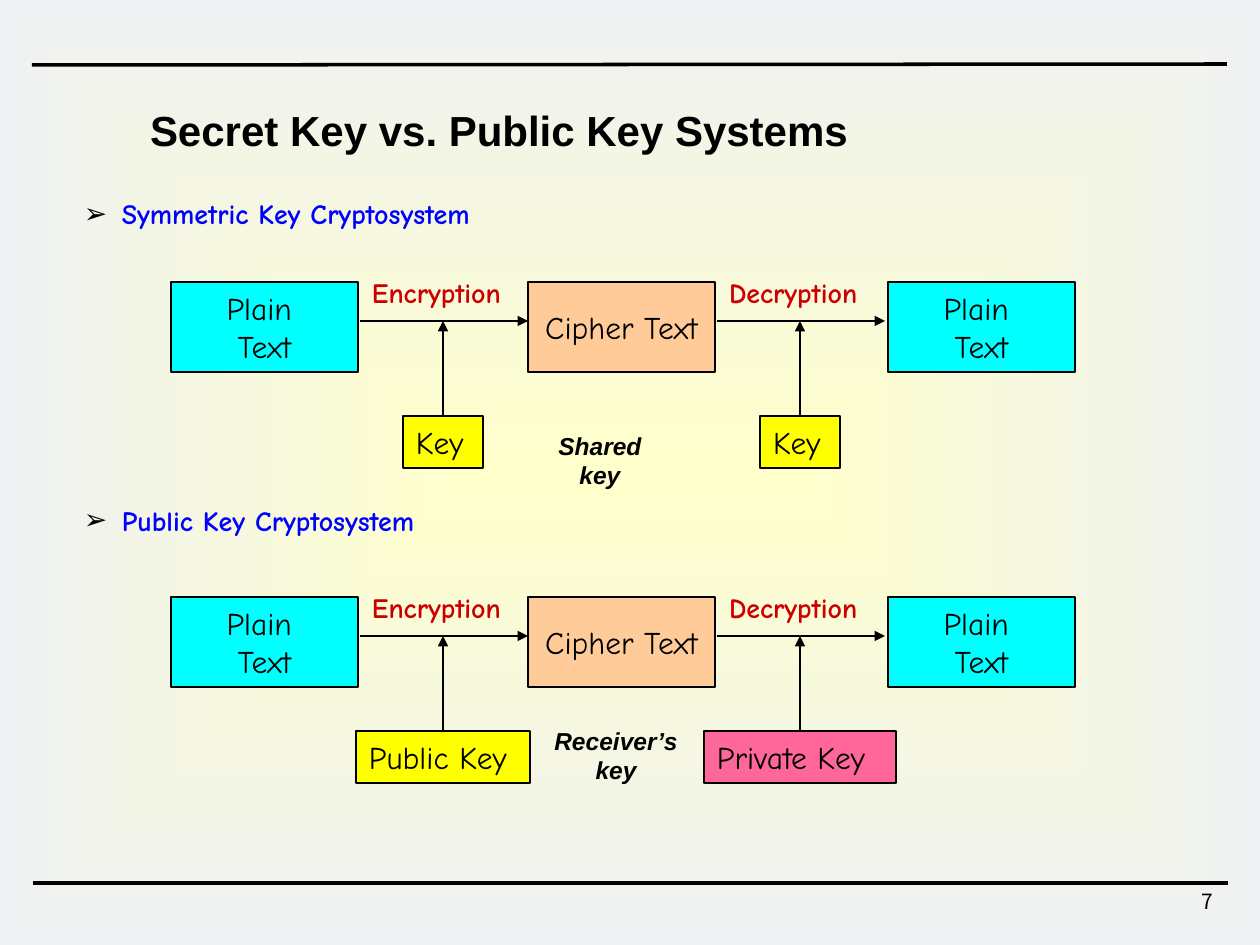
from dataclasses import dataclass

from lxml.etree import SubElement
from pptx import Presentation
from pptx.dml.color import RGBColor
from pptx.enum.shapes import MSO_CONNECTOR as Connector, MSO_SHAPE as Shape
from pptx.enum.text import MSO_ANCHOR as Anchor, MSO_AUTO_SIZE as AutoSize, PP_ALIGN as Align
from pptx.oxml.ns import qn
from pptx.slide import Slide
from pptx.util import Emu, Pt

BLACK = RGBColor(0x00, 0x00, 0x00)
BLUE = RGBColor(0x00, 0x00, 0xFF)
RED = RGBColor(0xCC, 0x00, 0x00)
CYAN = RGBColor(0x00, 0xFF, 0xFF)
PEACH = RGBColor(0xFF, 0xCC, 0x99)
YELLOW = RGBColor(0xFF, 0xFF, 0x00)
PINK = RGBColor(0xFF, 0x66, 0x99)
CREAM = RGBColor(0xFF, 0xFF, 0xCC)
MIST = RGBColor(0xEE, 0xF1, 0xF2)

HEADING = {"name": "Arial", "size": Pt(24), "bold": True, "color": BLACK}
BULLET = {"name": "Comic Neue", "size": Pt(16), "bold": True, "color": BLUE}
BOX = {"name": "Comic Neue", "size": Pt(18), "bold": False, "color": BLACK}
LABEL = BULLET | {"color": RED}
NOTE = {"name": "Arial", "size": Pt(14), "bold": True, "italic": True, "color": BLACK}
NUMBER = {"name": "Noto Sans CJK KR", "size": Pt(12), "color": BLACK}


def px(value):
    """Turn pixels at 126 to the inch into EMU."""
    return Emu(round(value * 914400 / 126))


@dataclass
class Board:
    """Draw styled elements on the current slide."""

    slide: Slide
    thin: float = 0.75
    rule: float = 2
    inset: int = 13

    def background(self, inner, outer):
        """Fill the slide from its centre outwards."""
        fill = self.slide.background.fill
        fill.gradient()
        for stop, color, position in zip(fill.gradient_stops, (inner, outer), (0, 1)):
            stop.color.rgb = color
            stop.position = position
        gradient = self.slide.element.find(".//" + qn("a:gradFill"))
        gradient.remove(gradient.find(qn("a:lin")))
        shade = SubElement(gradient, qn("a:path"), {"path": "shape"})
        SubElement(shade, qn("a:fillToRect"), dict.fromkeys("ltrb", "50000"))

    def fill_text(self, shape, text, style, align=Align.LEFT, anchor=Anchor.TOP, inset=None):
        """Put formatted text into a shape."""
        side = self.inset if inset is None else inset
        frame = shape.text_frame
        frame.text = text
        layout = {
            "word_wrap": True, "auto_size": AutoSize.NONE, "vertical_anchor": anchor,
            "margin_left": px(side), "margin_right": px(side),
            "margin_top": px(side // 2), "margin_bottom": px(side // 2),
        }
        for name, value in layout.items():
            setattr(frame, name, value)
        for paragraph in frame.paragraphs:
            paragraph.alignment = align
            paragraph.space_before = Pt(0)
            for run in paragraph.runs:
                for name, value in style.items():
                    if name == "color":
                        run.font.color.rgb = value
                    else:
                        setattr(run.font, name, value)

    def place(self, shape, left, top, width, height):
        """Move and size a shape."""
        for name, value in zip(("left", "top", "width", "height"), (left, top, width, height)):
            setattr(shape, name, px(value))

    def title(self, text, *area):
        """Use the title placeholder."""
        shape = self.slide.shapes.title
        self.place(shape, *area)
        self.fill_text(shape, text, HEADING, anchor=Anchor.MIDDLE)

    def bullets(self, items, gap, *area):
        """Use the body placeholder for a widely spaced list."""
        shape = self.slide.placeholders[1]
        self.place(shape, *area)
        self.fill_text(shape, "\n".join(items), BULLET, inset=0)
        for index, paragraph in enumerate(shape.text_frame.paragraphs):
            paragraph.space_before = Pt(gap if index else 0)
            properties = paragraph._p.get_or_add_pPr()
            properties.set("marL", str(px(38)))
            properties.set("indent", str(px(-38)))
            color = SubElement(properties, qn("a:buClr"))
            SubElement(color, qn("a:srgbClr"), val=str(BLACK))
            SubElement(properties, qn("a:buFont"), typeface="Arial")
            SubElement(properties, qn("a:buChar"), char="➢")

    def text(self, text, style, area, **options):
        """Add a text box."""
        shape = self.slide.shapes.add_textbox(*map(px, area))
        self.fill_text(shape, text, style, **options)

    def box(self, text, color, area, align=Align.CENTER):
        """Add a filled rectangle with text."""
        shape = self.slide.shapes.add_shape(Shape.RECTANGLE, *map(px, area))
        shape.shadow.inherit = False
        shape.fill.solid()
        shape.fill.fore_color.rgb = color
        shape.line.color.rgb = BLACK
        shape.line.width = Pt(self.thin)
        self.fill_text(shape, text, BOX, align, Anchor.MIDDLE)
        return shape

    def line(self, *ends, weight=None):
        """Add a plain straight line."""
        connector = self.slide.shapes.add_connector(Connector.STRAIGHT, *map(px, ends))
        connector.line.color.rgb = BLACK
        connector.line.width = Pt(weight or self.rule)
        SubElement(connector._element.spPr, qn("a:effectLst"))
        return connector

    def arrow(self, *ends, source=None):
        """Add an arrow, joined to the top of its source if given."""
        connector = self.line(*ends, weight=self.thin)
        SubElement(connector.line._get_or_add_ln(), qn("a:tailEnd"), type="triangle")
        if source is not None:
            connector.begin_connect(source, 0)

    def cryptosystem(self, top, keys):
        """Draw one row of texts, steps and keys."""
        lefts = (171, 528, 888)
        texts = (("Plain \nText", CYAN), ("Cipher Text", PEACH), ("Plain \nText", CYAN))
        for left, (text, color) in zip(lefts, texts):
            self.box(text, color, (left, top, 187, 90))
        flow, key_top = top + 39, top + 134
        for left, step, (text, color, width) in zip(lefts, ("Encryption", "Decryption"), keys):
            center = left + 272
            self.arrow(left + 189, flow, left + 357, flow)
            self.text(step, LABEL, (left + 188, top - 12, 168, 47))
            key = self.box(text, color, (center - width // 2, key_top, width, 52), Align.LEFT)
            self.arrow(center, key_top, center, flow, source=key)


def main():
    """Build and save the slide."""
    presentation = Presentation()
    presentation.slide_width, presentation.slide_height = px(1260), px(945)
    board = Board(presentation.slides.add_slide(presentation.slide_layouts[1]))
    board.background(CREAM, MIST)
    board.line(32, 65, 1227, 64)
    board.line(33, 883, 1228, 883)
    board.text("7", NUMBER, (964, 883, 262, 42), align=Align.RIGHT)
    board.title("Secret Key vs. Public Key Systems", 137, 98, 750, 63)
    board.bullets(("Symmetric Key Cryptosystem", "Public Key Cryptosystem"), 156, 84, 197, 1126, 401)
    board.cryptosystem(282, (("Key", YELLOW, 80), ("Key", YELLOW, 80)))
    board.cryptosystem(597, (("Public Key", YELLOW, 174), ("Private Key", PINK, 192)))
    board.text("Shared key", NOTE, (550, 431, 100, 59), align=Align.CENTER, inset=0)
    board.text("Receiver’s\nkey", NOTE, (551, 726, 130, 59), align=Align.CENTER, inset=0)
    presentation.save("out.pptx")


if __name__ == "__main__":
    main()
